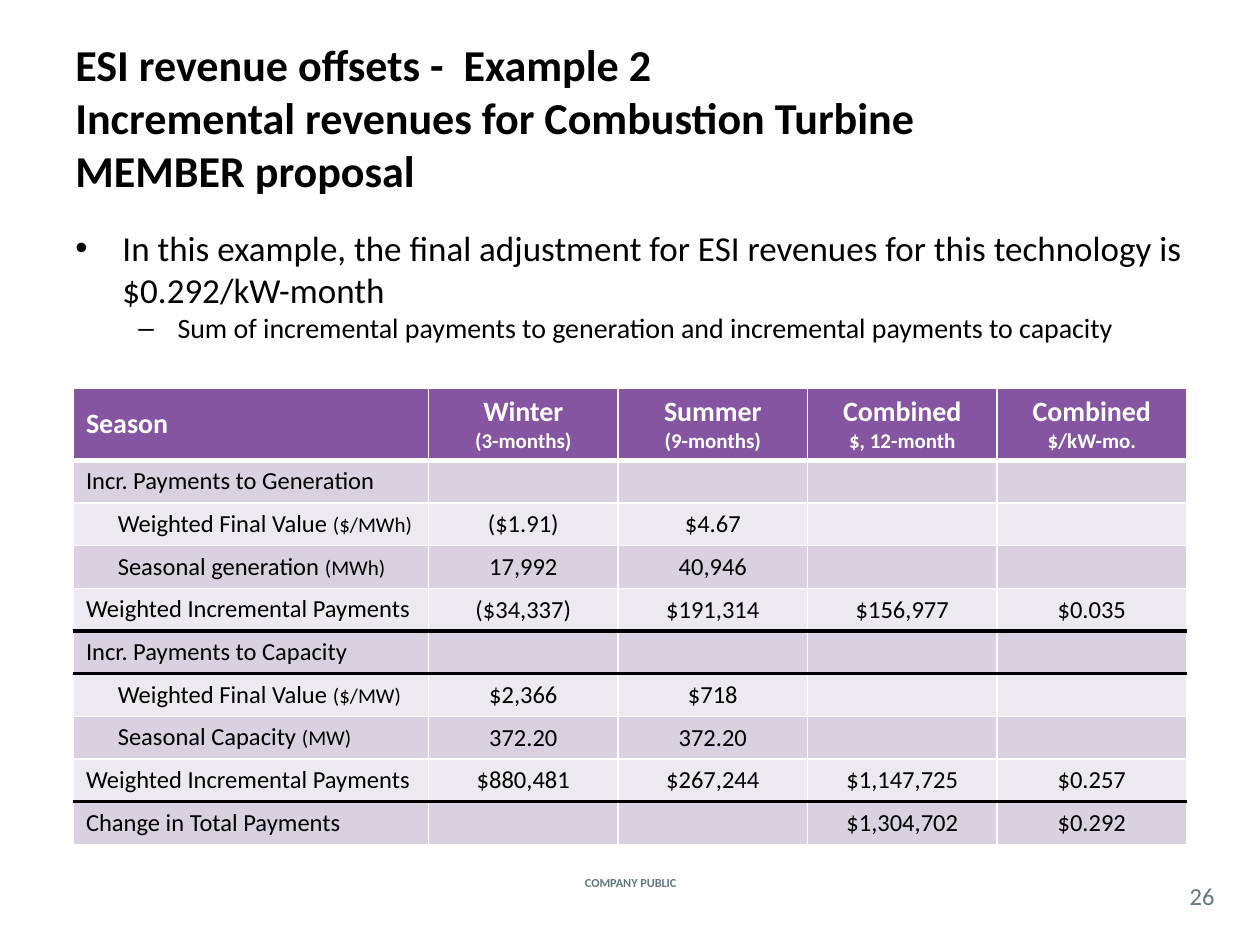
from lxml import etree
from pptx import Presentation
from pptx import util as u
from pptx.dml.color import RGBColor
from pptx.enum import text
from pptx.oxml import ns

BLACK = RGBColor(0x00, 0x00, 0x00)
WHITE = RGBColor(0xFF, 0xFF, 0xFF)
GREY = RGBColor(0x62, 0x77, 0x7F)
PURPLE = RGBColor(0x85, 0x55, 0xA1)
BANDS = (RGBColor(0xD9, 0xD1, 0xE0), RGBColor(0xED, 0xE9, 0xF0))
FONT = "Calibri"
LEFT, CENTER = text.PP_ALIGN.LEFT, text.PP_ALIGN.CENTER
TOP, MIDDLE, BOTTOM = (text.MSO_ANCHOR.TOP, text.MSO_ANCHOR.MIDDLE,
                       text.MSO_ANCHOR.BOTTOM)

HEADER = [("Season",), ("Winter", "(3-months)"), ("Summer", "(9-months)"),
          ("Combined", "$, 12-month"), ("Combined", "$/kW-mo.")]
# Label, unit (rows with a unit are indented), then the four value columns
ROWS = [
    ("Incr. Payments to Generation", "", "", "", "", ""),
    ("Weighted Final Value ", "($/MWh)", "($1.91)", "$4.67", "", ""),
    ("Seasonal generation ", "(MWh)", "17,992", "40,946", "", ""),
    ("Weighted Incremental Payments", "",
     "($34,337)", "$191,314", "$156,977", "$0.035"),
    ("Incr. Payments to Capacity", "", "", "", "", ""),
    ("Weighted Final Value ", "($/MW)", "$2,366", "$718", "", ""),
    ("Seasonal Capacity ", "(MW)", "372.20", "372.20", "", ""),
    ("Weighted Incremental Payments", "",
     "$880,481", "$267,244", "$1,147,725", "$0.257"),
    ("Change in Total Payments", "", "", "", "$1,304,702", "$0.292"),
]
RULED_ROWS = (4, 5, 8)  # table rows with a black line below


def add_run(p, content, size, color=BLACK, bold=False):
    """Add styled text; a vertical tab in it becomes a line break."""
    for i, line in enumerate(content.split("\v")):
        if i:
            p.add_line_break()
        r = p.add_run()
        r.text = line
        for name, value in {"name": FONT, "size": u.Pt(size),
                            "bold": bold}.items():
            setattr(r.font, name, value)
        r.font.color.rgb = color


def add_text_box(s, left, top, width, height, anchor=TOP, margin=None):
    sp = s.shapes.add_textbox(u.Cm(left), u.Cm(top), u.Cm(width), u.Cm(height))
    tf = sp.text_frame
    tf.word_wrap = True
    tf.vertical_anchor = anchor
    if margin is not None:
        for side in ("left", "top", "right", "bottom"):
            setattr(tf, f"margin_{side}", u.Cm(margin))
    return tf


def set_indent(p, left, first=0):
    pPr = p._p.get_or_add_pPr()
    pPr.set("marL", str(u.Cm(left)))
    pPr.set("indent", str(u.Cm(first)))
    return pPr


def add_bullet(p, char, content, size, left, hang):
    pPr = set_indent(p, left, -hang)
    etree.SubElement(pPr, ns.qn("a:buFont"), typeface="Arial")
    etree.SubElement(pPr, ns.qn("a:buChar"), char=char)
    add_run(p, content, size)


def set_borders(cell, top, bottom):
    """Draw white sides, and top and bottom lines given as (colour, points)."""
    tcPr = cell._tc.get_or_add_tcPr()
    lines = {"L": (WHITE, 1), "R": (WHITE, 1), "T": top, "B": bottom}
    for side, (color, width) in lines.items():
        ln = etree.SubElement(tcPr, ns.qn(f"a:ln{side}"), w=str(u.Pt(width)))
        fill = etree.SubElement(ln, ns.qn("a:solidFill"))
        etree.SubElement(fill, ns.qn("a:srgbClr"), val=str(color))


def fill_header(cell, lines, is_label):
    cell.vertical_anchor = MIDDLE if is_label else BOTTOM
    tf = cell.text_frame
    for i, line in enumerate(lines):
        p = tf.add_paragraph() if i else tf.paragraphs[0]
        p.alignment = LEFT if is_label else CENTER
        add_run(p, line, 12 if i else 16, WHITE, True)


def fill_body(cell, content, unit, is_label):
    cell.vertical_anchor = TOP if is_label else MIDDLE
    p = cell.text_frame.paragraphs[0]
    p.alignment = LEFT if is_label else CENTER
    if not content:  # an empty cell keeps the row's text height
        etree.SubElement(p._p, ns.qn("a:endParaRPr"), sz="1400")
        return
    add_run(p, content, 14)
    if unit:
        set_indent(p, 0.64)
        add_run(p, unit, 12)


def add_revenue_table(s):
    widths = [7.16] + [3.82] * 4
    heights = [1.45] + [0.86] * len(ROWS)
    table = s.shapes.add_table(len(heights), len(widths), u.Cm(1.48), u.Cm(7.83),
                               u.Cm(sum(widths)), u.Cm(sum(heights))).table
    table.horz_banding = False
    for column, width in zip(table.columns, widths):
        column.width = u.Cm(width)

    below = (WHITE, 1)
    for i, height in enumerate(heights):
        table.rows[i].height = u.Cm(height)
        above = below
        below = ((WHITE, 3) if i == 0 else
                 (BLACK, 2.25) if i in RULED_ROWS else (WHITE, 1))
        for j in range(len(widths)):
            cell = table.cell(i, j)
            set_borders(cell, above, below)
            cell.fill.solid()
            cell.fill.fore_color.rgb = BANDS[(i - 1) % 2] if i else PURPLE
            if i == 0:
                fill_header(cell, HEADER[j], j == 0)
            else:
                label, unit, *values = ROWS[i - 1]
                fill_body(cell, [label, *values][j], "" if j else unit, j == 0)


def main():
    prs = Presentation()
    prs.slide_width, prs.slide_height = u.Cm(25.4), u.Cm(19.05)
    s = prs.slides.add_slide(prs.slide_layouts[6])

    # Title
    tf = add_text_box(s, 1.27, 0.76, 22.86, 3.18, MIDDLE)
    add_run(tf.paragraphs[0],
            "ESI revenue offsets -  Example 2\v"
            "Incremental revenues for Combustion Turbine\v"
            "MEMBER proposal", 25.2, bold=True)

    # Bullets
    tf = add_text_box(s, 1.27, 4.45, 22.86, 3.2)
    add_bullet(tf.paragraphs[0], "•",
               "In this example, the final adjustment for ESI revenues for this "
               "technology is $0.292/kW-month", 20, 0.95, 0.95)
    p = tf.add_paragraph()
    p.level = 1
    add_bullet(p, "–", "Sum of incremental payments to generation and "
               "incremental payments to capacity", 16, 2.06, 0.79)

    # Payments by season
    add_revenue_table(s)

    # Footer and page number
    for content, size, bold, box in (
            ("COMPANY PUBLIC", 7, True, (10.85, 17.58, 3.73, 0.43)),
            ("26", 14, False, (23.7, 17.68, 1.07, 0.74))):
        p = add_text_box(s, *box, MIDDLE, 0).paragraphs[0]
        p.alignment = CENTER
        add_run(p, content, size, GREY, bold)

    prs.save("out.pptx")


if __name__ == "__main__":
    main()
